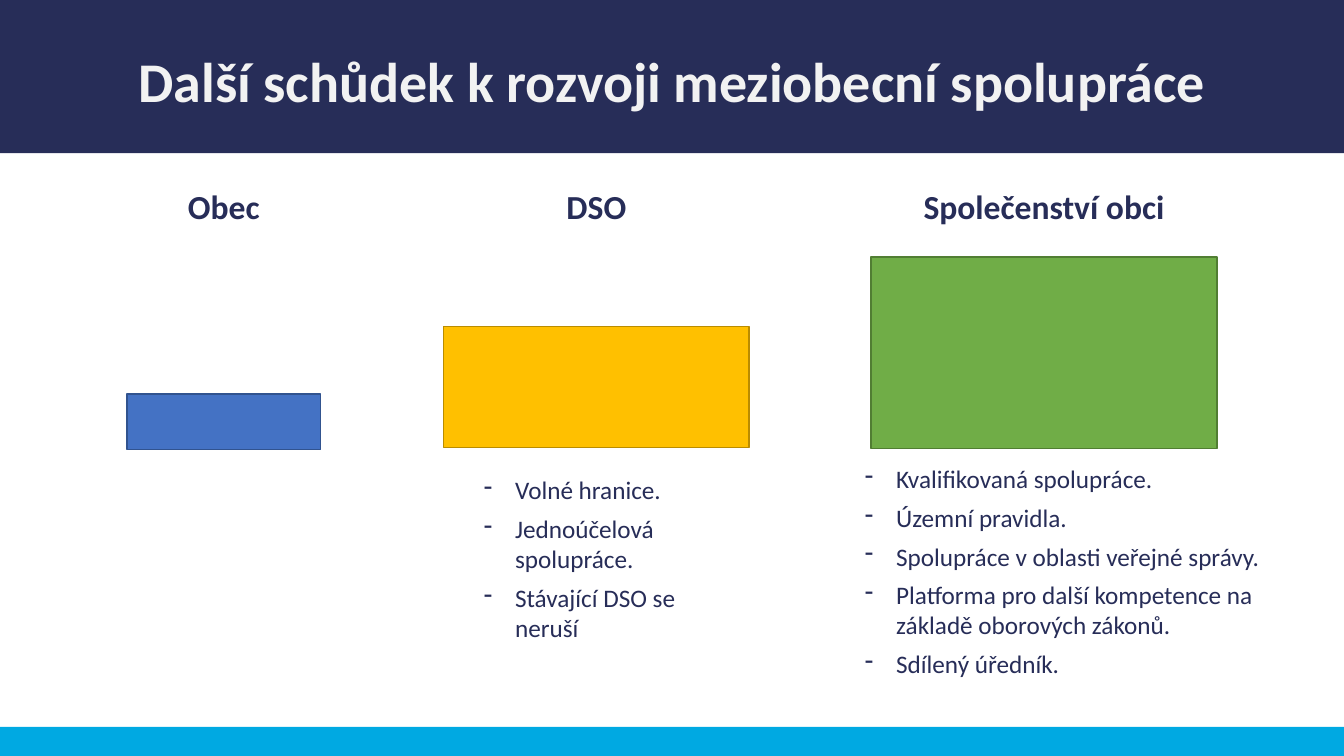
from lxml.etree import SubElement
from pptx import Presentation
from pptx.dml.color import RGBColor
from pptx.enum.shapes import MSO_SHAPE
from pptx.enum.text import MSO_AUTO_SIZE, PP_ALIGN
from pptx.oxml.ns import qn
from pptx.util import Inches, Pt

NAVY = "272D58"
SLIDE_WIDTH, SLIDE_HEIGHT = 13.33, 7.5


def color(hex_code):
    """Turn a hex string into a colour."""
    return RGBColor.from_string(hex_code)


class StepSlide:
    """Holds the text style and the slide being built."""

    def __init__(self, slide, font="Calibri", ink=NAVY):
        """Remember the slide, the font and the text colour."""
        self.slide = slide
        self.font = font
        self.ink = ink

    def block(self, left, top, width, height, fill, outline=None):
        """Draw a filled rectangle with an optional outline."""
        block = self.slide.shapes.add_shape(
            MSO_SHAPE.RECTANGLE, Inches(left), Inches(top), Inches(width), Inches(height))
        block.shadow.inherit = False
        block.fill.solid()
        block.fill.fore_color.rgb = color(fill)
        if outline:
            block.line.color.rgb = color(outline)
            block.line.width = Pt(1)
        else:
            block.line.fill.background()

    def frame(self, left, top, width, height):
        """Add a wrapping text box and return its text frame."""
        frame = self.slide.shapes.add_textbox(
            Inches(left), Inches(top), Inches(width), Inches(height)).text_frame
        frame.word_wrap = True
        frame.auto_size = MSO_AUTO_SIZE.SHAPE_TO_FIT_TEXT
        return frame

    def styled_run(self, paragraph, wording, size, ink=None, bold=False):
        """Add one styled run to a paragraph."""
        run = paragraph.add_run()
        run.text = wording
        run.font.name = self.font
        run.font.size = Pt(size)
        run.font.bold = bold
        run.font.color.rgb = color(ink or self.ink)

    def heading(self, left, top, width, height, wording, size, ink=None):
        """Add a centred bold line."""
        paragraph = self.frame(left, top, width, height).paragraphs[0]
        paragraph.alignment = PP_ALIGN.CENTER
        self.styled_run(paragraph, wording, size, ink, bold=True)

    def dashes(self, left, top, width, height, points):
        """Add a list with dash bullets."""
        frame = self.frame(left, top, width, height)
        for index, point in enumerate(points):
            paragraph = frame.add_paragraph() if index else frame.paragraphs[0]
            if index:
                paragraph.space_before = Pt(6)
            self.styled_run(paragraph, point, 18)
            properties = paragraph._p.get_or_add_pPr()
            properties.set("marL", str(Inches(0.31)))
            properties.set("indent", str(Inches(-0.31)))
            bullet_color = SubElement(properties, qn("a:buClr"))
            SubElement(bullet_color, qn("a:srgbClr"), val=self.ink)
            SubElement(properties, qn("a:buChar"), char="-")


def main():
    """Build and save the slide."""
    deck = Presentation()
    deck.slide_width = Inches(SLIDE_WIDTH)
    deck.slide_height = Inches(SLIDE_HEIGHT)
    page = StepSlide(deck.slides.add_slide(deck.slide_layouts[6]))

    page.block(0, 0, SLIDE_WIDTH, 1.52, NAVY)
    page.heading(0, 0.41, SLIDE_WIDTH, 0.77,
                 "Další schůdek k rozvoji meziobecní spolupráce", 40, "F2F2F2")

    steps = [
        ("Obec", 1.26, 3.91, 1.92, 0.55, "4472C4", "31538F"),
        ("DSO", 4.4, 3.24, 3.03, 1.2, "FFC000", "BA8C00"),
        ("Společenství obci", 8.64, 2.55, 3.43, 1.9, "70AD47", "517E33"),
    ]
    for name, left, top, width, height, fill, outline in steps:
        page.block(left, top, width, height, fill, outline)
        page.heading(left, 1.8, width, 0.5, name, 24)

    page.dashes(4.7, 4.66, 2.38, 2.17, [
        "Volné hranice.",
        "Jednoúčelová spolupráce.",
        "Stávající DSO se neruší",
    ])
    page.dashes(8.48, 4.55, 4.22, 2.64, [
        "Kvalifikovaná spolupráce.",
        "Územní pravidla.",
        "Spolupráce v oblasti veřejné správy.",
        "Platforma pro další kompetence na základě oborových zákonů.",
        "Sdílený úředník.",
    ])

    page.block(0, 7.21, SLIDE_WIDTH, 0.29, "00A9E2")
    deck.save("out.pptx")


if __name__ == "__main__":
    main()
